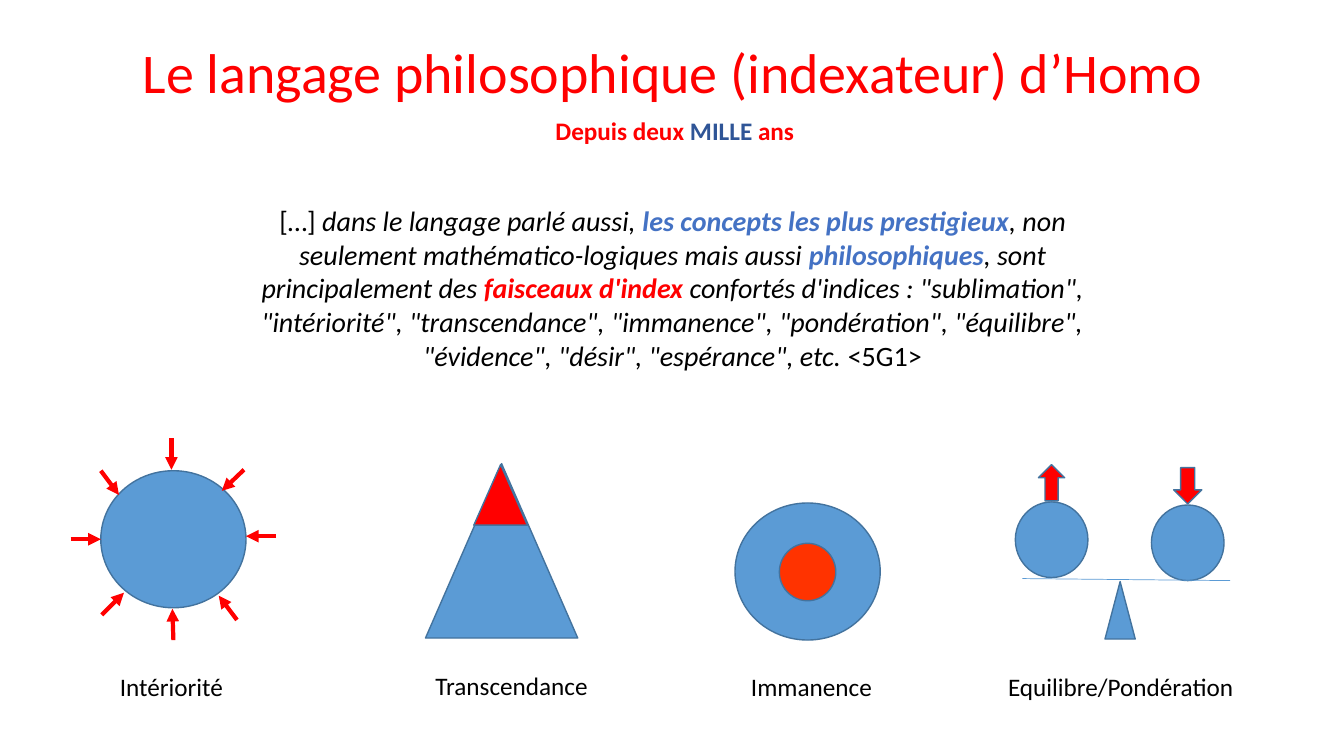
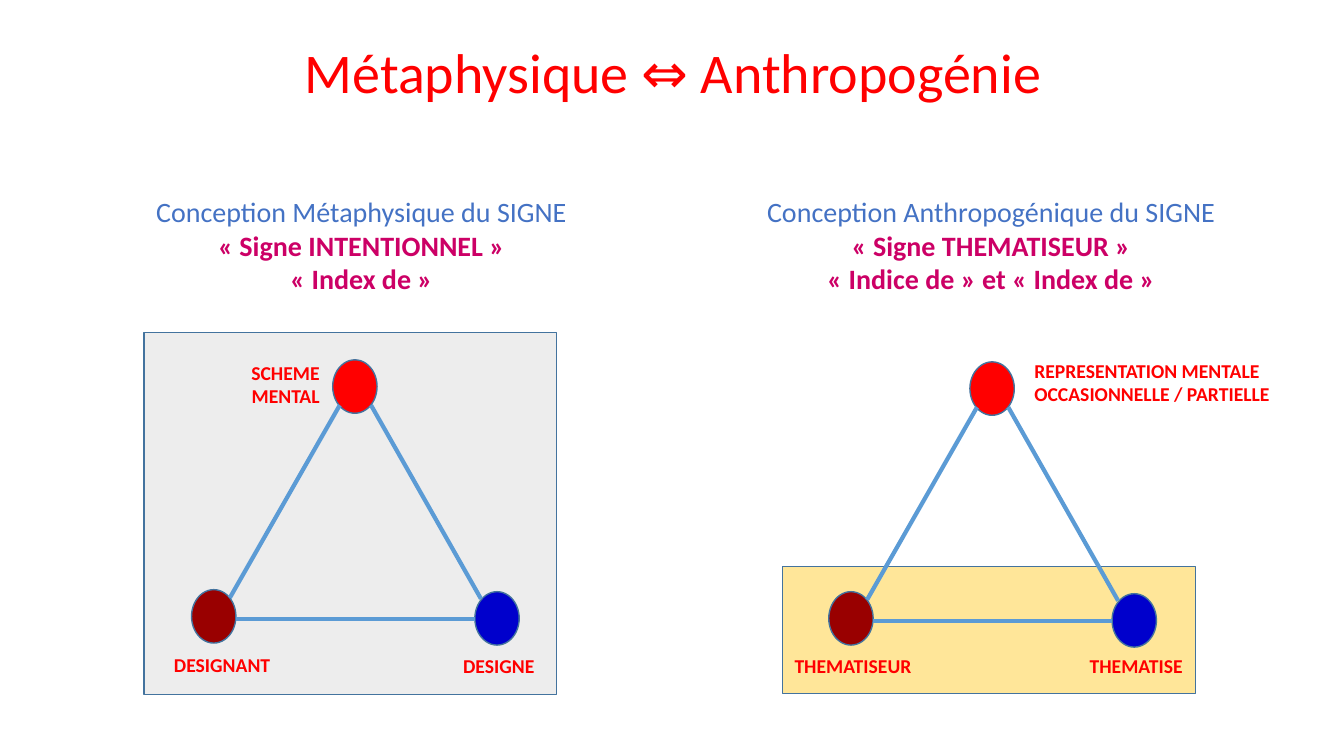
"""Build two slides on philosophical language and conceptions of the sign."""
import lxml.etree
import pptx
import pptx.dml.color
import pptx.enum.shapes
import pptx.enum.text
import pptx.oxml.ns
import pptx.util

Inches, Pt = pptx.util.Inches, pptx.util.Pt
Kind = pptx.enum.shapes.MSO_SHAPE
Align = pptx.enum.text.PP_ALIGN
Rgb = pptx.dml.color.RGBColor.from_string

THEME = {
    "font": "Calibri",
    "color": {
        "red": "FF0000", "black": "000000", "navy": "2F5597", "blue": "4472C4",
        "pink": "CC0066", "sky": "5B9BD5", "edge": "43739E", "core": "FF3300",
        "brown": "990000", "deep": "0000CC", "gray": "EDEDED", "sand": "FFE699",
    },
    "size": {"title": 40, "body": 20, "label": 18, "node": 14},
    "line": {"edge": 1, "beam": 0.5, "bold": 3},
}
ALIGN = {"l": Align.LEFT, "c": Align.CENTER, "r": Align.RIGHT}
FORMS = {
    "plain": {}, "bold": {"bold": True}, "ital": {"italic": True},
    "both": {"bold": True, "italic": True},
}

TITLES = [
    ("Le langage philosophique (indexateur) d’Homo", (1.26, 0.32, 10.82, 0.77)),
    ("Métaphysique ⇔ Anthropogénie", (2.82, 0.32, 7.71, 0.77)),
]
SINCE = [[("Depuis deux ", "red", "bold"), ("MILLE", "navy", "bold"), (" ans", "red", "bold")]]
QUOTE = [[
    ("[…] ", "black", "plain"),
    ("dans le langage parlé aussi, ", "black", "ital"),
    ("les concepts les plus prestigieux", "blue", "both"),
    (", non seulement mathématico-logiques mais aussi ", "black", "ital"),
    ("philosophiques", "blue", "both"),
    (", sont principalement des ", "black", "ital"),
    ("faisceaux d'index ", "red", "both"),
    ('confortés d\'indices : "sublimation", "intériorité", "transcendance", '
     '"immanence", "pondération", "équilibre", "évidence", "désir", '
     '"espérance", etc. ', "black", "ital"),
    ("<5G1>", "black", "plain"),
]]
NAMES = [
    ("Intériorité", (1.09, 6.61, 1.24, 0.4)),
    ("Transcendance", (4.22, 6.6, 1.73, 0.4)),
    ("Immanence", (7.35, 6.61, 1.42, 0.4)),
    ("Equilibre/Pondération", (9.9, 6.61, 2.46, 0.4)),
]
ICONS = [
    (Kind.OVAL, (1, 4.67, 1.44, 1.36), "sky"),
    (Kind.OVAL, (7.29, 4.99, 1.44, 1.36), "sky"),
    (Kind.OVAL, (10.07, 4.98, 0.72, 0.75), "sky"),
    (Kind.OVAL, (11.42, 5.01, 0.72, 0.75), "sky"),
    (Kind.ISOSCELES_TRIANGLE, (10.96, 5.77, 0.3, 0.57), "sky"),
    (Kind.ISOSCELES_TRIANGLE, (4.22, 4.6, 1.51, 1.73), "sky"),
    (Kind.ISOSCELES_TRIANGLE, (4.7, 4.61, 0.53, 0.6), "red"),
    (Kind.OVAL, (7.73, 5.39, 0.56, 0.57), "core"),
    (Kind.UP_ARROW, (10.3, 4.61, 0.26, 0.36), "red"),
    (Kind.DOWN_ARROW, (11.64, 4.64, 0.28, 0.36), "red"),
]
BEAM = (10.14, 5.74, 12.2, 5.76)
INWARD = [
    (0.7, 5.35, 1, 5.35), (1.7, 4.35, 1.7, 4.66), (2.74, 5.32, 2.44, 5.32),
    (1, 4.67, 1.18, 4.91), (2.42, 4.66, 2.2, 4.87), (1.72, 6.35, 1.71, 6.04),
    (1.01, 6.1, 1.23, 5.88), (2.35, 6.15, 2.17, 5.91),
]

PANELS = [((7.76, 5.62, 4.1, 1.26), "sand"), ((1.43, 3.3, 4.09, 3.59), "gray")]
ORIGINS = [(1.9, 3.57), (8.22, 3.59)]
NODE = (0.44, 0.53)
NODES = [(1.4, 0, "red"), (0, 2.28, "brown"), (2.81, 2.3, "deep")]
SIDES = [(0.44, 2.57, 2.81, 2.57), (0.38, 2.36, 1.47, 0.45), (2.87, 2.37, 1.78, 0.45)]
HEADS = [
    ((1.43, 1.88, 4.31, 1.11), "Conception Métaphysique du SIGNE",
     ["« Signe INTENTIONNEL »", "« Index de »"]),
    ((7.49, 1.88, 4.68, 1.11), "Conception Anthropogénique du SIGNE",
     ["« Signe THEMATISEUR »", "« Indice de » et « Index de »"]),
]
ROLES = [
    (["REPRESENTATION MENTALE", "OCCASIONNELLE / PARTIELLE"], (10.16, 3.51, 2.65, 0.57), "l", True),
    (["SCHEME", "MENTAL"], (2.38, 3.53, 0.89, 0.57), "r", False),
    (["DESIGNANT"], (1.61, 6.43, 1.17, 0.34), "r", False),
    (["DESIGNE"], (4.48, 6.44, 0.92, 0.34), "r", False),
    (["THEMATISEUR"], (7.77, 6.44, 1.37, 0.34), "r", False),
    (["THEMATISE"], (10.7, 6.44, 1.13, 0.34), "r", False),
]


def tint(name):
    return Rgb(THEME["color"][name])


def apply(item, values):
    for key, value in values.items():
        setattr(item, key, value)


def write(slide, box, lines, size, align="l", wrap=False):
    frame = slide.shapes.add_textbox(*map(Inches, box)).text_frame
    apply(frame, {"word_wrap": wrap,
                  "auto_size": pptx.enum.text.MSO_AUTO_SIZE.SHAPE_TO_FIT_TEXT})
    for row, runs in enumerate(lines):
        para = frame.add_paragraph() if row else frame.paragraphs[0]
        para.alignment = ALIGN[align]
        for text, color, form in runs:
            run = para.add_run()
            run.text = text
            apply(run.font, {"name": THEME["font"], "size": Pt(THEME["size"][size]),
                             **FORMS[form]})
            run.font.color.rgb = tint(color)


def draw(shapes, kind, box, color):
    shape = shapes.add_shape(kind, *map(Inches, box))
    shape.shadow.inherit = False
    shape.fill.solid()
    shape.fill.fore_color.rgb = tint(color)
    shape.line.color.rgb = tint("edge")
    shape.line.width = Pt(THEME["line"]["edge"])


def link(shapes, ends, color, width, arrow=False):
    line = shapes.add_connector(pptx.enum.shapes.MSO_CONNECTOR.STRAIGHT, *map(Inches, ends))
    line.line.color.rgb = tint(color)
    line.line.width = Pt(THEME["line"][width])
    props = line.element.spPr
    name = pptx.oxml.ns.qn
    if arrow:
        lxml.etree.SubElement(props.find(name("a:ln")), name("a:tailEnd"), type="triangle")
    lxml.etree.SubElement(props, name("a:effectLst"))


def start(deck, title):
    slide = deck.slides.add_slide(deck.slide_layouts[6])
    text, box = title
    write(slide, box, [[(text, "red", "plain")]], "title", "c")
    return slide


def concepts(deck):
    slide = start(deck, TITLES[0])
    write(slide, (5.41, 1.09, 2.59, 0.4), SINCE, "label")
    write(slide, (2.16, 1.97, 9.02, 1.78), QUOTE, "body", "c", True)
    for icon in ICONS:
        draw(slide.shapes, *icon)
    link(slide.shapes, BEAM, "sky", "beam")
    for ends in INWARD:
        link(slide.shapes, ends, "red", "bold", True)
    for name, box in NAMES:
        write(slide, box, [[(name, "black", "plain")]], "label")


def signs(deck):
    slide = start(deck, TITLES[1])
    for box, color in PANELS:
        draw(slide.shapes, Kind.RECTANGLE, box, color)
    for left, top in ORIGINS:
        group = slide.shapes.add_group_shape().shapes
        for x, y, color in NODES:
            draw(group, Kind.OVAL, (left + x, top + y, *NODE), color)
        for x1, y1, x2, y2 in SIDES:
            link(group, (left + x1, top + y1, left + x2, top + y2), "sky", "bold")
    for box, head, notes in HEADS:
        lines = [[(head, "blue", "plain")]] + [[(note, "pink", "bold")] for note in notes]
        write(slide, box, lines, "body", "c")
    for words, box, align, wrap in ROLES:
        write(slide, box, [[(word, "red", "bold")] for word in words], "node", align, wrap)


def main():
    deck = pptx.Presentation()
    apply(deck, {"slide_width": Inches(13.33), "slide_height": Inches(7.5)})
    concepts(deck)
    signs(deck)
    deck.save("out.pptx")


if __name__ == "__main__":
    main()
